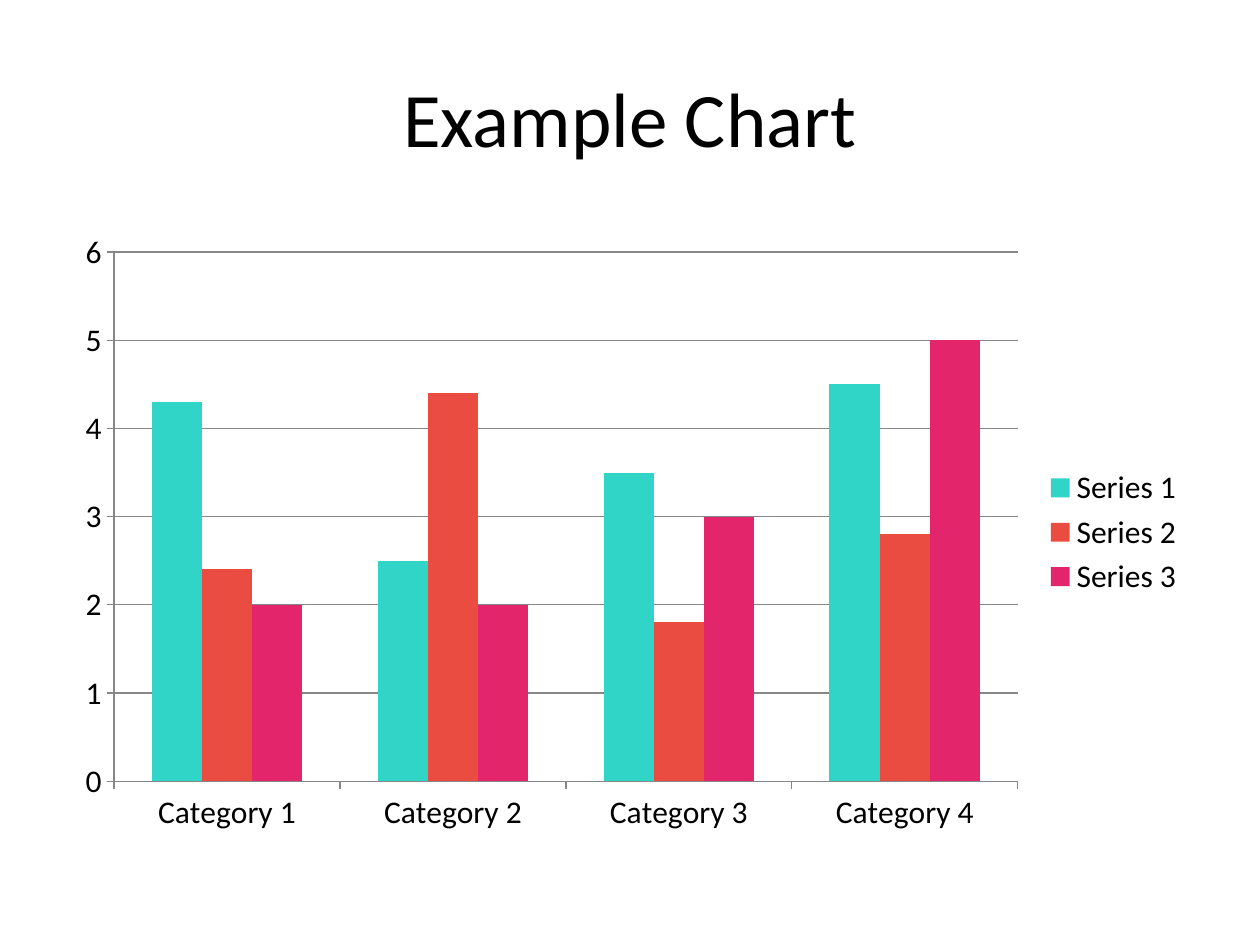
from pptx import Presentation
from pptx.chart.data import CategoryChartData
from pptx.dml.color import RGBColor
from pptx.enum.chart import XL_CHART_TYPE, XL_LEGEND_POSITION, XL_TICK_MARK
from pptx.enum.text import MSO_ANCHOR, PP_ALIGN
from pptx.util import Inches, Pt

CLUSTERED = XL_CHART_TYPE.COLUMN_CLUSTERED
LEGEND_RIGHT = XL_LEGEND_POSITION.RIGHT
TICK_OUTSIDE = XL_TICK_MARK.OUTSIDE
MIDDLE = MSO_ANCHOR.MIDDLE
CENTER = PP_ALIGN.CENTER

FONT = "Calibri"
COLORS = {
    "text": "000000",
    "axis": "878787",
    "Series 1": "30D5C8",
    "Series 2": "EB4C42",
    "Series 3": "E3256B",
}
CATEGORIES = ["Category 1", "Category 2", "Category 3", "Category 4"]
SERIES = {
    "Series 1": (4.3, 2.5, 3.5, 4.5),
    "Series 2": (2.4, 4.4, 1.8, 2.8),
    "Series 3": (2, 2, 3, 5),
}


def color(name):
    return RGBColor.from_string(COLORS[name])


def format_font(font, size):
    font.name = FONT
    font.size = Pt(size)
    font.color.rgb = color("text")


def write_text(frame, text, size=18, align=CENTER, anchor=MIDDLE):
    frame.word_wrap = True
    frame.vertical_anchor = anchor
    para = frame.paragraphs[0]
    para.alignment = align
    span = para.add_run()
    span.text = text
    format_font(span.font, size)


def add_title(page, left, top, width, height):
    title = page.shapes.title
    title.left, title.top = left, top
    title.width, title.height = width, height
    write_text(title.text_frame, "Example Chart", size=44)


def format_line(line):
    line.color.rgb = color("axis")
    line.width = Pt(0.75)


def add_column_chart(page, left, top, width, height):
    data = CategoryChartData()
    data.categories = CATEGORIES
    for name, values in SERIES.items():
        data.add_series(name, values)
    chart = page.shapes.add_chart(CLUSTERED, left, top, width, height, data).chart

    format_font(chart.font, 18)
    chart.has_title = False
    chart.has_legend = True
    chart.legend.position = LEGEND_RIGHT
    chart.legend.include_in_layout = False

    for axis in (chart.category_axis, chart.value_axis):
        axis.major_tick_mark = TICK_OUTSIDE
        format_line(axis.format.line)
    chart.value_axis.has_major_gridlines = True
    format_line(chart.value_axis.major_gridlines.format.line)

    plot = chart.plots[0]
    plot.vary_by_categories = False
    plot.gap_width = 150
    plot.overlap = 0
    for series in plot.series:
        series.format.fill.solid()
        series.format.fill.fore_color.rgb = color(series.name)


def main():
    deck = Presentation()
    deck.slide_width, deck.slide_height = Inches(10), Inches(7.5)
    page = deck.slides.add_slide(deck.slide_layouts[5])
    add_title(page, Inches(0.5), Inches(0.3), Inches(9), Inches(1.25))
    add_column_chart(page, Inches(0.5), Inches(1.75), Inches(9), Inches(4.95))
    deck.save("out.pptx")


if __name__ == "__main__":
    main()
